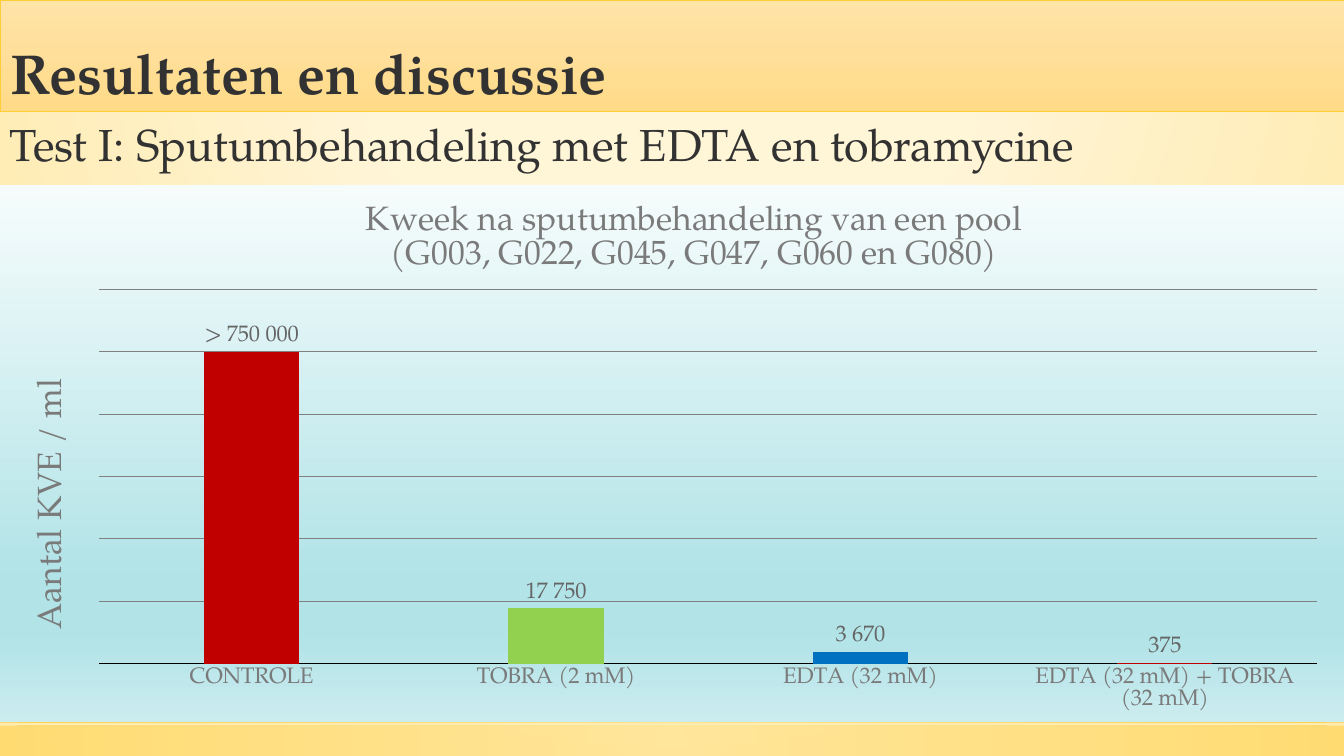
"""Build the results slide on treating sputum with EDTA and tobramycin."""
from dataclasses import dataclass

from lxml import etree
from pptx import Presentation
from pptx.chart import data as chart_data
from pptx.dml.color import RGBColor
from pptx.enum import chart as charts, shapes, text
from pptx.oxml import ns, parse_xml
from pptx.util import Inches, Pt

HEADING = "Resultaten en discussie"
TEST = "Test I: Sputumbehandeling met EDTA en tobramycine"
CULTURE = ["Kweek na sputumbehandeling van een pool",
           "(G003, G022, G045, G047, G060 en G080)"]
COUNT_AXIS = ["Aantal KVE / ml"]
TREATMENTS = [
    ("CONTROLE", 100000, "> 750 000", "C00000"),
    ("TOBRA (2 mM)", 17750, "17 750", "92D050"),
    ("EDTA (32 mM)", 3670, "3 670", "0070C0"),
    ("EDTA (32 mM) + TOBRA (32 mM)", 375, "375", "C00000"),
]
BANDS = [(7.2, 0.3, 50), (7.09, 0.08, 80)]
WIDTH, HEIGHT = 13.33, 7.5
HEADING_HEIGHT = 1.11


@dataclass(frozen=True)
class Theme:
    font: str = "TeX Gyre Pagella"
    ink: str = "323232"
    muted: str = "7A7A7A"
    value: str = "656565"
    grid: str = "808080"
    axis: str = "000000"
    border: str = "FFCD36"
    page: tuple = ((0, "FFF5D7"), (40, "FFF5D7"), (100, "FFEBAF"))
    band: tuple = ((0, "FFE186"), (100, "FFCD36"))
    heading: tuple = ((0, "FFE4A8"), (50, "FFDF99"), (100, "FFDB87"))
    chart: tuple = ((0, "F6FCFC"), (74, "B1E3E7"), (83, "B1E3E7"), (100, "CBECEF"))
    heading_size: int = 40
    test_size: int = 32
    chart_title_size: int = 24
    label_size: int = 16


THEME = Theme()


def gradient(stops, centre=None, alpha=100):
    """Return a gradient running down, or outward from a centre rectangle."""
    marks = "".join(
        f'<a:gs pos="{at * 1000}"><a:srgbClr val="{colour}">'
        f'<a:alpha val="{alpha * 1000}"/></a:srgbClr></a:gs>' for at, colour in stops)
    if centre:
        sides = " ".join(f'{side}="{share * 1000}"' for side, share in zip("ltrb", centre))
        course = f'<a:path path="circle"><a:fillToRect {sides}/></a:path>'
    else:
        course = '<a:lin ang="5400000" scaled="0"/>'
    return parse_xml(f'<a:gradFill {ns.nsdecls("a")} rotWithShape="1">'
                     f'<a:gsLst>{marks}</a:gsLst>{course}</a:gradFill>')


def paint(fill, element, shading):
    """Give an element a gradient fill."""
    fill.background()
    blank = element.find(".//" + ns.qn("a:noFill"))
    blank.getparent().replace(blank, shading)


def style(font, size, colour, bold=False):
    """Set the typeface, size, colour and weight of a font."""
    font.name, font.size, font.bold = THEME.font, Pt(size), bold
    font.color.rgb = RGBColor.from_string(colour)


def place(shape, left, top, width, height):
    """Move and size a shape in inches."""
    shape.left, shape.top = Inches(left), Inches(top)
    shape.width, shape.height = Inches(width), Inches(height)


def pin(parent, **shares):
    """Fix a chart part at shares of the chart area."""
    old = parent.find(ns.qn("c:layout"))
    if old is not None:
        parent.remove(old)
    layout = etree.Element(ns.qn("c:layout"))
    manual = etree.SubElement(layout, ns.qn("c:manualLayout"))
    if "w" in shares:
        etree.SubElement(manual, ns.qn("c:layoutTarget"), val="inner")
    for side in "xy":
        etree.SubElement(manual, ns.qn(f"c:{side}Mode"), val="edge")
    for side, share in shares.items():
        etree.SubElement(manual, ns.qn(f"c:{side}"), val=str(share))
    words = parent.find(ns.qn("c:tx"))
    if words is None:
        parent.insert(0, layout)
    else:
        words.addnext(layout)


def write_title(title, lines, **shares):
    """Write a chart or axis title and fix its place."""
    frame = title.text_frame
    frame.text = "\n".join(lines)
    for paragraph in frame.paragraphs:
        style(paragraph.font, THEME.chart_title_size, THEME.muted)
    pin(title._element, **shares)


def add_heading(slide):
    """Fill the title placeholder and set the test name below it."""
    heading = slide.shapes.title
    place(heading, 0, 0, WIDTH, HEADING_HEIGHT)
    paint(heading.fill, heading._element, gradient(THEME.heading))
    heading.line.color.rgb = RGBColor.from_string(THEME.border)
    heading.line.width = Pt(0.5)
    test = slide.shapes.add_textbox(0, Inches(HEADING_HEIGHT), Inches(13.22), Inches(0.64))
    for shape, words, size, bold in ((heading, HEADING, THEME.heading_size, True),
                                     (test, TEST, THEME.test_size, False)):
        frame = shape.text_frame
        frame.text, frame.word_wrap = words, True
        frame.auto_size = text.MSO_AUTO_SIZE.NONE
        frame.paragraphs[0].alignment = text.PP_ALIGN.LEFT
        style(frame.paragraphs[0].font, size, THEME.ink, bold)
    heading.text_frame.vertical_anchor = text.MSO_ANCHOR.BOTTOM
    heading.text_frame.paragraphs[0].line_spacing = 0.9


def add_bands(slide):
    """Draw the bands along the bottom edge."""
    for top, height, alpha in BANDS:
        band = slide.shapes.add_shape(shapes.MSO_SHAPE.RECTANGLE, 0, Inches(top),
                                      Inches(WIDTH), Inches(height))
        band.shadow.inherit = False
        paint(band.fill, band._element, gradient(THEME.band, (50, 50, 50, 50), alpha))
        band.line.fill.background()


def add_counts(slide):
    """Add the column chart of colony counts."""
    counts = chart_data.CategoryChartData()
    counts.categories = [name for name, *_ in TREATMENTS]
    counts.add_series("Series 1", [count for _, count, *_ in TREATMENTS])
    chart = slide.shapes.add_chart(
        charts.XL_CHART_TYPE.COLUMN_CLUSTERED, 0, Inches(1.84),
        Inches(WIDTH), Inches(5.32), counts).chart
    chart.has_legend = False
    style(chart.font, 10, THEME.ink)
    area = etree.Element(ns.qn("c:spPr"))
    area.append(gradient(THEME.chart))
    etree.SubElement(etree.SubElement(area, ns.qn("a:ln")), ns.qn("a:noFill"))
    chart._chartSpace.find(ns.qn("c:txPr")).addprevious(area)
    write_title(chart.chart_title, CULTURE, x=0.27, y=0.03)
    pin(chart._chartSpace.chart.plotArea, x=0.074, y=0.194, w=0.906, h=0.698)

    treatments, scale = chart.category_axis, chart.value_axis
    for axis in (treatments, scale):
        axis.major_tick_mark = axis.minor_tick_mark = charts.XL_TICK_MARK.NONE
    style(treatments.tick_labels.font, THEME.label_size, THEME.muted)
    scale.tick_label_position = charts.XL_TICK_LABEL_POSITION.NONE
    scale.minimum_scale, scale.maximum_scale, scale.major_unit = 0, 120000, 20000
    scale.format.line.fill.background()
    write_title(scale.axis_title, COUNT_AXIS, x=0.02, y=0.35)
    for line, colour in ((treatments.format.line, THEME.axis),
                         (scale.major_gridlines.format.line, THEME.grid)):
        line.color.rgb, line.width = RGBColor.from_string(colour), Pt(0.75)

    plot = chart.plots[0]
    plot.gap_width, plot.overlap, plot.vary_by_categories = 219, -27, False
    columns = plot.series[0]
    columns.data_labels.show_value = True
    columns.data_labels.position = charts.XL_LABEL_POSITION.OUTSIDE_END
    style(columns.data_labels.font, THEME.label_size, THEME.value)
    for index, (_, _, shown, colour) in enumerate(TREATMENTS):
        point = columns.points[index]
        point.format.fill.solid()
        point.format.fill.fore_color.rgb = RGBColor.from_string(colour)
        label = point.data_label
        label.text_frame.text = shown
        style(label.text_frame.paragraphs[0].font, THEME.label_size, THEME.value)
        label.position = charts.XL_LABEL_POSITION.OUTSIDE_END


def main():
    """Build and save the slide."""
    deck = Presentation()
    deck.slide_width, deck.slide_height = Inches(WIDTH), Inches(HEIGHT)
    slide = deck.slides.add_slide(deck.slide_layouts[5])
    paint(slide.background.fill, slide._element.cSld,
          gradient(THEME.page, (50, -80, 50, 180)))
    add_bands(slide)
    add_heading(slide)
    add_counts(slide)
    deck.save("out.pptx")


if __name__ == "__main__":
    main()
